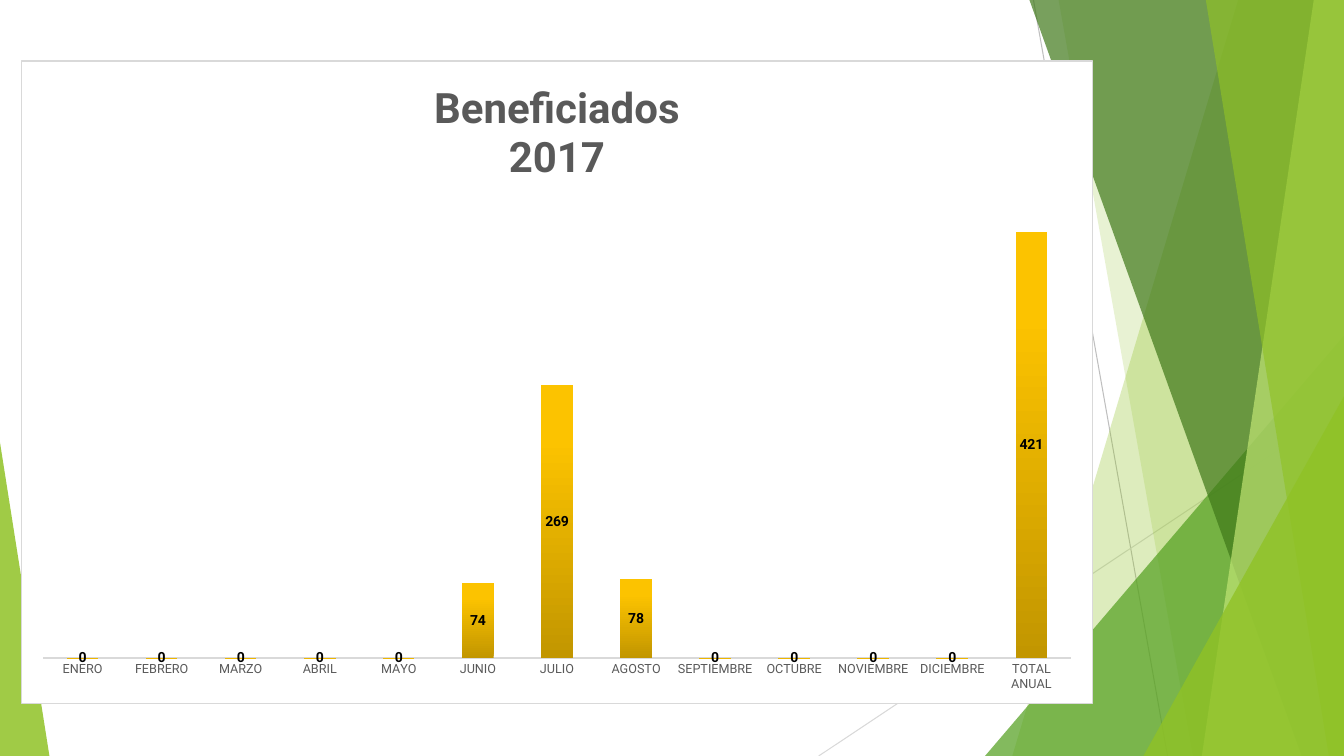
from copy import deepcopy

from lxml import etree
from pptx import Presentation
from pptx.chart.data import CategoryChartData
from pptx.dml.color import RGBColor
from pptx.enum.chart import XL_CHART_TYPE as Chart, XL_LABEL_POSITION as Place
from pptx.enum.chart import XL_TICK_MARK as Tick
from pptx.enum.shapes import MSO_CONNECTOR as Link, MSO_SHAPE as Shape
from pptx.oxml import parse_xml
from pptx.oxml.ns import nsdecls, qn
from pptx.util import Inches, Pt

WIDE, HIGH = 13.33, 7.5
FONT = "Roboto"
COLORS = {
    "white": "FFFFFF", "black": "000000", "gray": "595959",
    "rule": "D9D9D9", "dim": "BFBFBF",
    "lime": "90C226", "green": "54A021", "dark": "3F7819", "pale": "C0E474",
    "gold_low": "C29600", "gold_mid": "FCC300", "gold_top": "FDC400",
}
MONTHS = ["ENERO", "FEBRERO", "MARZO", "ABRIL", "MAYO", "JUNIO", "JULIO",
          "AGOSTO", "SEPTIEMBRE", "OCTUBRE", "NOVIEMBRE", "DICIEMBRE"]
COUNTS = [0, 0, 0, 0, 0, 74, 269, 78, 0, 0, 0, 0]


def color(name):
    return RGBColor.from_string(COLORS[name])


def style(font, size, tone, bold=False):
    font.name, font.size, font.bold = FONT, Pt(size), bold
    font.color.rgb = color(tone)


def write(frame, text, **form):
    """Fill a text frame, one paragraph per line of text."""
    for index, line in enumerate(text.split("\n")):
        para = frame.add_paragraph() if index else frame.paragraphs[0]
        run = para.add_run()
        run.text = line
        style(run.font, **form)


def paint(shape, tone, alpha):
    """Give a shape a plain see-through fill; alpha is in percent."""
    shape.shadow.inherit = False
    shape.line.fill.background()
    shape.fill.solid()
    shape.fill.fore_color.rgb = color(tone)
    tint = shape.fill._xPr.find(".//" + qn("a:srgbClr"))
    etree.SubElement(tint, qn("a:alpha")).set("val", str(alpha * 1000))


def add_line(slide, start, end, tone):
    ends = [Inches(n) for n in (*start, *end)]
    line = slide.shapes.add_connector(Link.STRAIGHT, *ends)
    line.line.color.rgb = color(tone)
    line.line.width = Pt(0.75)
    etree.SubElement(line._element.spPr, qn("a:effectLst"))


def add_band(slide, top, foot, tone, alpha):
    """Draw a band from the slanted edge top-foot to the right side."""
    edge = [(WIDE, 0), (WIDE, HIGH), (foot, HIGH)]
    build = slide.shapes.build_freeform(Inches(top), 0)
    build.add_line_segments([(Inches(x), Inches(y)) for x, y in edge])
    paint(build.convert_to_shape(), tone, alpha)


def add_wedge(slide, left, top, width, peak, tone, alpha):
    """Draw a triangle standing on the lower edge of the slide."""
    box = [Inches(n) for n in (left, top, width, HIGH - top)]
    wedge = slide.shapes.add_shape(Shape.ISOSCELES_TRIANGLE, *box)
    wedge.adjustments[0] = peak
    paint(wedge, tone, alpha)


def add_decor(slide):
    add_line(slide, (10.25, 0), (11.58, HIGH), "dim")
    add_line(slide, (WIDE, 4.03), (8.12, HIGH), "rule")
    add_band(slide, 12.28, 10.04, "lime", 30)
    add_band(slide, 10.5, 11.83, "lime", 20)
    add_wedge(slide, 9.77, 3.33, 3.56, 1, "green", 72)
    add_band(slide, 10.21, 12.91, "dark", 70)
    add_band(slide, 13.03, 11.92, "pale", 70)
    add_band(slide, 11.96, 13.18, "lime", 65)
    add_wedge(slide, 11.34, 3.93, 1.99, 1, "lime", 80)
    add_wedge(slide, 0, 4.39, 0.49, 0, "lime", 85)


def shade(fill):
    """Grade the bars from dark gold at the foot to bright gold."""
    fill.gradient()
    fill.gradient_angle = 90
    stops = fill._xPr.find(".//" + qn("a:gsLst"))
    stops.insert(1, deepcopy(stops[0]))
    tones = [(0, "gold_low"), (0.8, "gold_mid"), (1, "gold_top")]
    for stop, (place, tone) in zip(fill.gradient_stops, tones):
        stop.position = place
        stop.color.rgb = color(tone)


def frame_chart(chart):
    """Set the chart's white ground, thin border and plot area."""
    ground = parse_xml(
        f'<c:spPr {nsdecls("c", "a")}>'
        f'<a:solidFill><a:srgbClr val="{COLORS["white"]}"/></a:solidFill>'
        f'<a:ln w="{Pt(0.75)}"><a:solidFill>'
        f'<a:srgbClr val="{COLORS["rule"]}"/></a:solidFill></a:ln></c:spPr>')
    chart._chartSpace.find(qn("c:txPr")).addprevious(ground)
    area = chart._chartSpace.find(".//" + qn("c:plotArea"))
    for old in area.findall(qn("c:layout")):
        area.remove(old)
    layout = etree.Element(qn("c:layout"))
    manual = etree.SubElement(layout, qn("c:manualLayout"))
    for tag, value in [("layoutTarget", "inner"), ("xMode", "edge"),
                       ("yMode", "edge"), ("x", 0.02), ("y", 0.22),
                       ("w", 0.96), ("h", 0.71)]:
        etree.SubElement(manual, qn("c:" + tag)).set("val", str(value))
    area.insert(0, layout)


def add_bars(slide, left, top, width, height):
    data = CategoryChartData()
    data.categories = MONTHS + ["TOTAL ANUAL"]
    data.add_series("Series 1", COUNTS + [sum(COUNTS)])
    box = [Inches(n) for n in (left, top, width, height)]
    chart = slide.shapes.add_chart(Chart.COLUMN_STACKED, *box, data).chart
    style(chart.font, 10, "black")
    frame_chart(chart)
    chart.has_legend = False
    chart.has_title = True
    chart.chart_title.include_in_layout = False
    write(chart.chart_title.text_frame, "Beneficiados\n2017",
          size=30, tone="gray", bold=True)

    months = chart.category_axis
    months.major_tick_mark = months.minor_tick_mark = Tick.NONE
    months.format.line.color.rgb = color("rule")
    months.format.line.width = Pt(1)
    style(months.tick_labels.font, 9, "gray")
    scale = chart.value_axis
    scale.visible = scale.has_major_gridlines = False
    scale.minimum_scale, scale.maximum_scale = 0, 450

    plot = chart.plots[0]
    plot.gap_width, plot.overlap, plot.vary_by_categories = 150, 100, False
    bars = plot.series[0]
    shade(bars.format.fill)
    labels = bars.data_labels
    labels.show_value = True
    labels.position = Place.CENTER
    style(labels.font, 10, "black", bold=True)


def main():
    deck = Presentation()
    deck.slide_width, deck.slide_height = Inches(WIDE), Inches(HIGH)
    slide = deck.slides.add_slide(deck.slide_layouts[6])
    add_decor(slide)
    add_bars(slide, 0.21, 0.6, 10.63, 6.38)
    deck.save("out.pptx")


if __name__ == "__main__":
    main()
